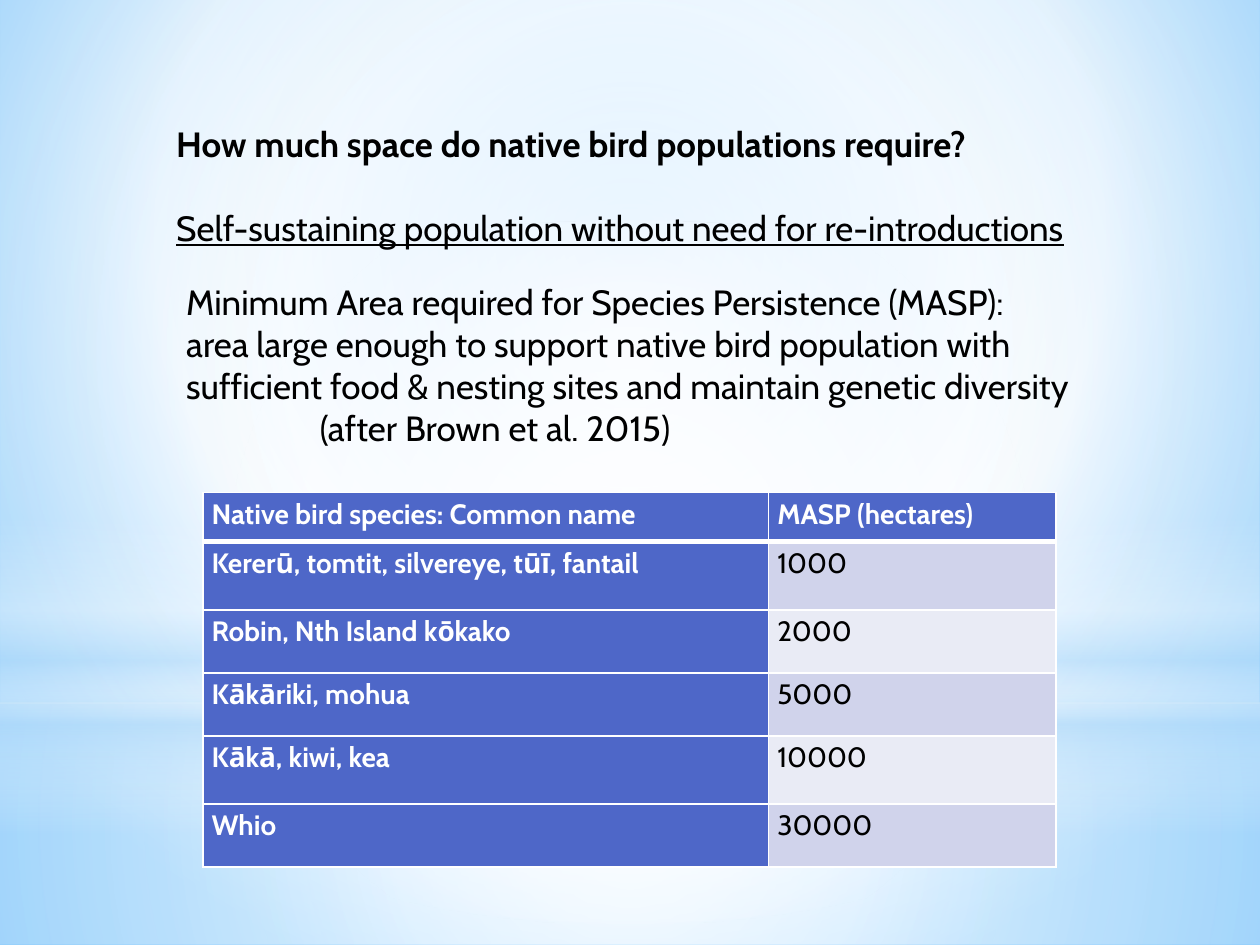
import pptx
import pptx.util
import pptx.dml.color
import pptx.enum.shapes
import pptx.oxml
import pptx.oxml.ns

Inches = pptx.util.Inches
Pt = pptx.util.Pt
RGBColor = pptx.dml.color.RGBColor
SHAPES = pptx.enum.shapes.MSO_SHAPE

BLACK = RGBColor(0x00, 0x00, 0x00)
WHITE = RGBColor(0xFF, 0xFF, 0xFF)
BLUE = RGBColor(0x4E, 0x67, 0xC8)
BANDS = [RGBColor(0xD0, 0xD3, 0xEB), RGBColor(0xE9, 0xEB, 0xF5)]
SKY = RGBColor(0xB4, 0xDC, 0xFA)
LIGHT_SKY = RGBColor(0x9E, 0xD5, 0xFF)
DEEP_SKY = RGBColor(0x5B, 0xB9, 0xFF)
FONT = "Cabin"

# Content
TITLE = "How much space do native bird populations require?"
SUBTITLE = "Self-sustaining population without need for re-introductions"
DEFINITION = [
    "Minimum Area required for Species Persistence (MASP):",
    "area large enough to support native bird population with "
    "sufficient food & nesting sites and maintain genetic diversity",
    "(after Brown et al. 2015)",
]
AREAS = [
    ("Native bird species: Common name", "MASP (hectares)"),
    ("Kererū, tomtit, silvereye, tūī, fantail", "1000"),
    ("Robin, Nth Island kōkako", "2000"),
    ("Kākāriki, mohua", "5000"),
    ("Kākā, kiwi, kea", "10000"),
    ("Whio", "30000"),
]
COLUMN_WIDTHS = [4.49, 2.28]
ROW_HEIGHTS = [0.39, 0.54, 0.5, 0.5, 0.54, 0.5]

# Backdrop: gradient stops are (position %, colour, opacity %)
CENTRE = (50, 50, 50, 50)
PAGE_STOPS = [(0, LIGHT_SKY, 100), (60, WHITE, 100), (100, DEEP_SKY, 100)]
PAGE_FOCUS = (20, 10, 20, 60)
GLOWS = [
    (SHAPES.RECTANGLE, (0, 5.58, 10, 1.92),
     [(0, WHITE, 91), (37, WHITE, 76), (100, SKY, 79)], CENTRE),
    (SHAPES.RECTANGLE, (0, 0, 10, 5.58),
     [(0, WHITE, 89), (48, WHITE, 62), (100, SKY, 79)], CENTRE),
    (SHAPES.RECTANGLE, (0, 4.12, 10, 2.5),
     [(0, WHITE, 0), (29, WHITE, 30), (45, SKY, 40),
      (55, WHITE, 26), (65, SKY, 60), (100, WHITE, 0)], None),
    (SHAPES.OVAL, (0, 1.75, 10, 5.58),
     [(0, WHITE, 100), (56, WHITE, 0)], CENTRE),
]


def set_gradient(fill, parent, stops, focus):
    """Circular gradient around focus, or a vertical one without focus."""
    fill.solid()
    if focus:
        sides = " ".join(f'{side}="{value * 1000}"' for side, value in zip("ltrb", focus))
        direction = f'<a:path path="circle"><a:fillToRect {sides}/></a:path>'
    else:
        direction = '<a:lin ang="5400000" scaled="0"/>'
    stop_list = "".join(
        f'<a:gs pos="{position * 1000}"><a:srgbClr val="{colour}">'
        f'<a:alpha val="{opacity * 1000}"/></a:srgbClr></a:gs>'
        for position, colour, opacity in stops)
    gradient = pptx.oxml.parse_xml(
        f'<a:gradFill {pptx.oxml.ns.nsdecls("a")} rotWithShape="1">'
        f'<a:gsLst>{stop_list}</a:gsLst>{direction}</a:gradFill>')
    solid = parent.find(pptx.oxml.ns.qn("a:solidFill"))
    parent.replace(solid, gradient)


def style(paragraph, size, colour, bold=False, underline=False):
    for span in paragraph.runs:
        span.font.name = FONT
        span.font.size = Pt(size)
        span.font.color.rgb = colour
        span.font.bold = bold
        span.font.underline = underline


def add_text(page, place, lines):
    box = page.shapes.add_textbox(*map(Inches, place))
    box.text_frame.word_wrap = True
    box.text_frame.text = "\n".join(lines)
    for paragraph in box.text_frame.paragraphs:
        style(paragraph, 20, BLACK)
    return box.text_frame.paragraphs


def set_border(cell, side, width):
    properties = cell._tc.get_or_add_tcPr()
    line = pptx.oxml.parse_xml(
        f'<a:ln{side} {pptx.oxml.ns.nsdecls("a")} w="{Pt(width)}">'
        f'<a:solidFill><a:srgbClr val="{WHITE}"/></a:solidFill></a:ln{side}>')
    properties.append(line)


def add_areas_table(page):
    frame = page.shapes.add_table(
        len(AREAS), len(COLUMN_WIDTHS), Inches(1.61), Inches(3.91),
        Inches(sum(COLUMN_WIDTHS)), Inches(sum(ROW_HEIGHTS)))
    table = frame.table
    table.first_col = True
    for column, width in zip(table.columns, COLUMN_WIDTHS):
        column.width = Inches(width)
    for row, height in zip(table.rows, ROW_HEIGHTS):
        row.height = Inches(height)
    for r, values in enumerate(AREAS):
        for c, value in enumerate(values):
            cell = table.cell(r, c)
            heading = r == 0 or c == 0
            cell.text_frame.text = value
            cell.margin_left = cell.margin_right = Inches(0.07)
            cell.margin_top = cell.margin_bottom = 0
            paragraph = cell.text_frame.paragraphs[0]
            paragraph.line_spacing = 1.15
            style(paragraph, 16, WHITE if heading else BLACK, bold=heading)
            # Borders come before the fill; the header rule is thicker
            for side in "LRTB":
                header_rule = (r, side) in ((0, "B"), (1, "T"))
                set_border(cell, side, 3 if header_rule else 1)
            cell.fill.solid()
            cell.fill.fore_color.rgb = BLUE if heading else BANDS[(r - 1) % 2]


def main():
    deck = pptx.Presentation()
    deck.slide_width, deck.slide_height = Inches(10), Inches(7.5)
    page = deck.slides.add_slide(deck.slide_layouts[6])

    # Background and glows
    fill = page.background.fill
    fill.solid()
    set_gradient(fill, page._element.cSld.bg.bgPr, PAGE_STOPS, PAGE_FOCUS)
    for kind, place, stops, focus in GLOWS:
        glow = page.shapes.add_shape(kind, *map(Inches, place))
        glow.shadow.inherit = False
        glow.line.fill.background()
        set_gradient(glow.fill, glow._element.spPr, stops, focus)

    # Headings
    title, subtitle = add_text(page, (1.3, 0.92, 7.75, 1.11), [TITLE, SUBTITLE])
    style(title, 20, BLACK, bold=True)
    style(subtitle, 20, BLACK, underline=True)
    subtitle.space_before = Pt(24)

    # Definition, with its citation indented
    citation = add_text(page, (1.38, 2.18, 7.24, 1.45), DEFINITION)[-1]
    citation._p.get_or_add_pPr().set("marL", str(Inches(1.06)))

    add_areas_table(page)
    deck.save("out.pptx")


if __name__ == "__main__":
    main()
